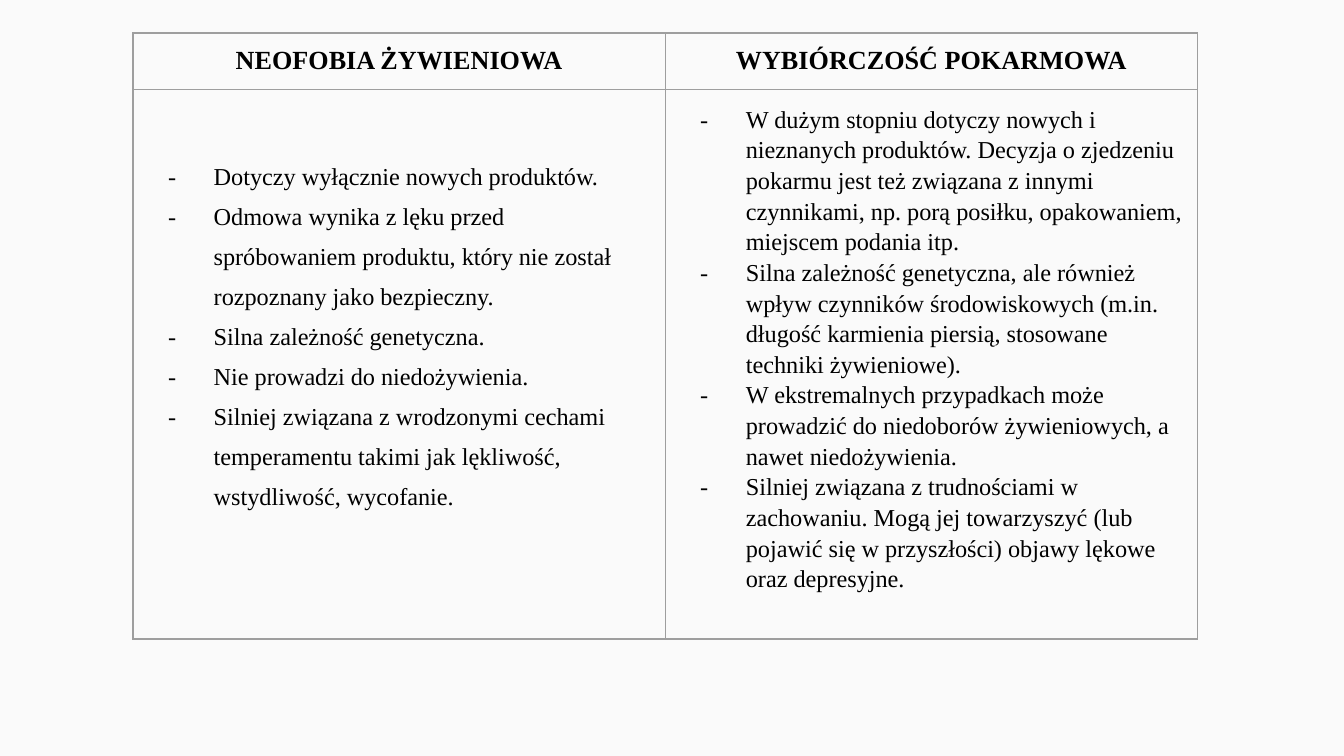
from lxml.etree import SubElement
from pptx import Presentation
from pptx.dml.color import RGBColor
from pptx.enum.text import PP_ALIGN as Align
from pptx.oxml.ns import qn
from pptx.util import Inches, Pt

BACKGROUND = RGBColor(0xFA, 0xFA, 0xFA)
INK = RGBColor(0, 0, 0)
RULE = RGBColor(0x9E, 0x9E, 0x9E)
FONT = "Times New Roman"

# Content: one entry per column
COLUMNS = [
    {
        "heading": "NEOFOBIA ŻYWIENIOWA",
        "spacing": 1.5,
        "top": 0.46,
        "points": [
            "Dotyczy wyłącznie nowych produktów.",
            "Odmowa wynika z lęku przed spróbowaniem produktu, który nie "
            "został rozpoznany jako bezpieczny.",
            "Silna zależność genetyczna.",
            "Nie prowadzi do niedożywienia.",
            "Silniej związana z wrodzonymi cechami temperamentu takimi jak "
            "lękliwość, wstydliwość, wycofanie.",
        ],
    },
    {
        "heading": "WYBIÓRCZOŚĆ POKARMOWA",
        "spacing": 1.15,
        "top": 0.1,
        "points": [
            "W dużym stopniu dotyczy nowych i nieznanych produktów. Decyzja o "
            "zjedzeniu pokarmu jest też związana z innymi czynnikami, np. porą "
            "posiłku, opakowaniem, miejscem podania itp.",
            "Silna zależność genetyczna, ale również wpływ czynników "
            "środowiskowych (m.in. długość karmienia piersią, stosowane "
            "techniki żywieniowe).",
            "W ekstremalnych przypadkach może prowadzić do niedoborów "
            "żywieniowych, a nawet niedożywienia.",
            "Silniej związana z trudnościami w zachowaniu. Mogą jej "
            "towarzyszyć (lub pojawić się w przyszłości) objawy lękowe oraz "
            "depresyjne.",
        ],
    },
]

# Slide and table grid, in inches
SLIDE_WIDTH = 10
SLIDE_HEIGHT = SLIDE_WIDTH * 9 / 16
LEFT, TOP = 0.99, 0.245
COLUMN_WIDTH = 3.96
ROW_HEIGHTS = (0.42, 4.09)
INSET = 0.1


def add_colour(parent, colour):
    SubElement(parent, qn("a:srgbClr"), val=str(colour))


def frame_cell(cell, top=INSET):
    """Set the insets, the borders and an empty fill."""
    cell.margin_left = cell.margin_right = cell.margin_bottom = Inches(INSET)
    cell.margin_top = Inches(top)
    properties = cell._tc.get_or_add_tcPr()
    for side in ("lnL", "lnR", "lnT", "lnB"):
        border = SubElement(properties, qn(f"a:{side}"), w=str(Pt(0.75)))
        add_colour(SubElement(border, qn("a:solidFill")), RULE)
    cell.fill.background()


def write(paragraph, text, size=13, bold=False, align=Align.LEFT,
          spacing=1.0, bullet=None):
    paragraph.alignment = align
    paragraph.line_spacing = spacing
    if bullet:
        properties = paragraph._p.get_or_add_pPr()
        properties.set("marL", str(Inches(0.5)))
        properties.set("indent", str(Inches(-0.34)))
        add_colour(SubElement(properties, qn("a:buClr")), INK)
        SubElement(properties, qn("a:buFont"), typeface=FONT)
        SubElement(properties, qn("a:buChar"), char=bullet)
    run = paragraph.add_run()
    run.text = text
    run.font.name = FONT
    run.font.size = Pt(size)
    run.font.bold = bold
    run.font.color.rgb = INK


def main():
    deck = Presentation()
    deck.slide_width = Inches(SLIDE_WIDTH)
    deck.slide_height = Inches(SLIDE_HEIGHT)
    slide = deck.slides.add_slide(deck.slide_layouts[6])
    slide.background.fill.solid()
    slide.background.fill.fore_color.rgb = BACKGROUND

    # Comparison table
    comparison = slide.shapes.add_table(
        len(ROW_HEIGHTS), len(COLUMNS), Inches(LEFT), Inches(TOP),
        Inches(COLUMN_WIDTH * len(COLUMNS)), Inches(sum(ROW_HEIGHTS))).table
    comparison.first_row = comparison.horz_banding = False
    for row, height in zip(comparison.rows, ROW_HEIGHTS):
        row.height = Inches(height)

    for index, column in enumerate(COLUMNS):
        comparison.columns[index].width = Inches(COLUMN_WIDTH)

        # Heading
        heading = comparison.cell(0, index)
        frame_cell(heading)
        write(heading.text_frame.paragraphs[0], column["heading"],
              size=14, bold=True, align=Align.CENTER)

        # Bulleted points
        body = comparison.cell(1, index)
        frame_cell(body, top=column["top"])
        frame = body.text_frame
        for number, point in enumerate(column["points"]):
            paragraph = frame.add_paragraph() if number else frame.paragraphs[0]
            write(paragraph, point, spacing=column["spacing"], bullet="-")

    deck.save("out.pptx")


if __name__ == "__main__":
    main()
